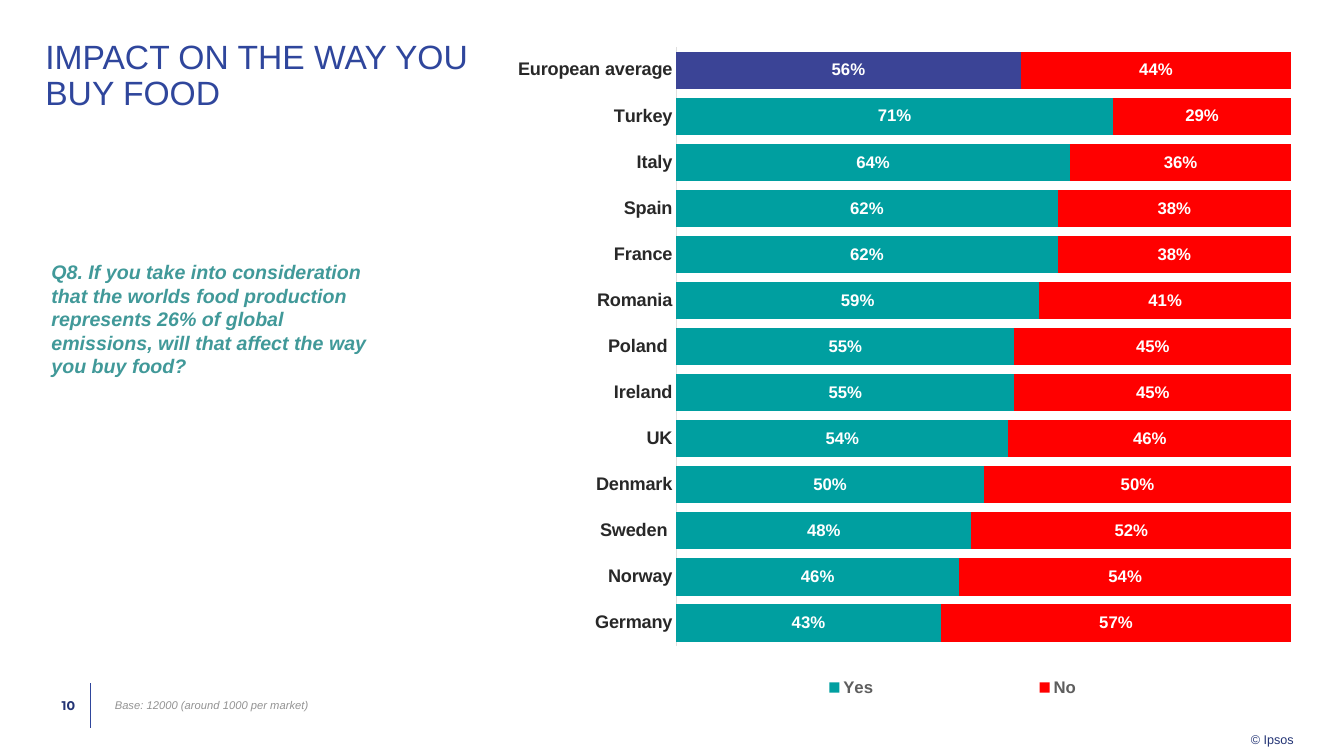
from lxml import etree
from pptx import Presentation
from pptx.chart.data import CategoryChartData
from pptx.dml.color import RGBColor
from pptx.enum.chart import XL_CHART_TYPE, XL_LABEL_POSITION, XL_LEGEND_POSITION, XL_TICK_MARK
from pptx.enum.shapes import MSO_CONNECTOR
from pptx.enum.text import MSO_ANCHOR, PP_ALIGN
from pptx.oxml import parse_xml
from pptx.oxml.ns import nsdecls, qn
from pptx.util import Pt

BAR_STACKED_100 = XL_CHART_TYPE.BAR_STACKED_100
CENTER = XL_LABEL_POSITION.CENTER
BOTTOM = XL_LEGEND_POSITION.BOTTOM
NO_TICK = XL_TICK_MARK.NONE
STRAIGHT = MSO_CONNECTOR.STRAIGHT
TOP = MSO_ANCHOR.TOP
MIDDLE = MSO_ANCHOR.MIDDLE
RIGHT = PP_ALIGN.RIGHT


def style_font(font, size, color, bold=False, italic=False, name="Arial"):
    font.name = name
    font.size = Pt(size)
    font.bold = bold
    font.italic = italic
    font.color.rgb = RGBColor.from_string(color)


def chart_layout(x, y, width, height, target=""):
    return parse_xml(
        f'<c:layout {nsdecls("c")}><c:manualLayout>{target}'
        '<c:xMode val="edge"/><c:yMode val="edge"/>'
        f'<c:x val="{x}"/><c:y val="{y}"/><c:w val="{width}"/><c:h val="{height}"/>'
        '</c:manualLayout></c:layout>'
    )


presentation = Presentation()
presentation.slide_width = Pt(960)
presentation.slide_height = Pt(540)
slide = presentation.slides.add_slide(presentation.slide_layouts[6])

divider = slide.shapes.add_connector(STRAIGHT, Pt(64.8), Pt(488.2), Pt(64.8), Pt(519.8))
divider.line.color.rgb = RGBColor.from_string("2F469C")
divider.line.width = Pt(0.5)
etree.SubElement(divider._element.spPr, qn("a:effectLst"))

question = (
    "Q8. If you take into consideration that the worlds food production "
    "represents 26% of global emissions, will that affect the way you buy food?"
)
texts = [
    ("IMPACT ON THE WAY YOU BUY FOOD", (32.4, 28.8, 337.7, 30.2), (0, 0, 0, 0), TOP,
     dict(size=24, color="2F469C")),
    (question, (36.7, 185.8, 238.3, 85), (0, 0, 0, 0), TOP,
     dict(size=14, color="419999", bold=True, italic=True)),
    ("10", (32.4, 488.2, 32.4, 31), (0, 0, 11.2, 0), MIDDLE,
     dict(size=9, color="233475", bold=True, name="Montserrat")),
    ("Base: 12000 (around 1000 per market)", (74.9, 488.2, 200.2, 31), (7.2, 3.6, 7.2, 3.6), MIDDLE,
     dict(size=8, color="939393", italic=True)),
    ("© Ipsos", (893.5, 519.8, 31, 13.7), (0, 2.9, 0, 0), TOP,
     dict(size=9, color="233475")),
]
paragraphs = []
for text, box, insets, anchor, font_style in texts:
    frame = slide.shapes.add_textbox(*[Pt(length) for length in box]).text_frame
    frame.margin_left, frame.margin_top, frame.margin_right, frame.margin_bottom = [
        Pt(inset) for inset in insets
    ]
    frame.vertical_anchor = anchor
    frame.word_wrap = True
    paragraph = frame.paragraphs[0]
    paragraph.text = text
    style_font(paragraph.font, **font_style)
    paragraphs.append(paragraph)

title, question_paragraph, page_number, base_note, copyright_line = paragraphs
title.line_spacing = 0.9
page_number.alignment = RIGHT
copyright_line._parent.word_wrap = False

yes_shares = {
    "European average": 0.56,
    "Turkey": 0.71,
    "Italy": 0.64,
    "Spain": 0.62,
    "France": 0.62,
    "Romania": 0.59,
    "Poland ": 0.55,
    " Ireland": 0.55,
    "UK": 0.54,
    "Denmark": 0.5,
    "Sweden ": 0.48,
    "Norway": 0.46,
    "Germany": 0.43,
}
chart_data = CategoryChartData(number_format="0%")
chart_data.categories = list(yes_shares)
chart_data.add_series("Yes", list(yes_shares.values()))
chart_data.add_series("No", [round(1 - share, 2) for share in yes_shares.values()])
chart = slide.shapes.add_chart(
    BAR_STACKED_100, Pt(370), Pt(28.8), Pt(558), Pt(491.8), chart_data
).chart
style_font(chart.font, 10, "282828")
chart.has_title = False

plot = chart.plots[0]
plot.gap_width = 24
plot.overlap = 100
plot.vary_by_categories = False
for series, color in zip(plot.series, ["009FA0", "FF0000"]):
    series.format.fill.solid()
    series.format.fill.fore_color.rgb = RGBColor.from_string(color)
    labels = series.data_labels
    labels.show_value = True
    labels.position = CENTER
    labels.number_format = "0%"
    labels.number_format_is_linked = False
    style_font(labels.font, 12, "FFFFFF", bold=True)
average_fill = plot.series[0].points[0].format.fill
average_fill.solid()
average_fill.fore_color.rgb = RGBColor.from_string("3B4496")

category_axis = chart.category_axis
category_axis.reverse_order = True
category_axis.major_tick_mark = NO_TICK
category_axis.minor_tick_mark = NO_TICK
category_axis.format.line.color.rgb = RGBColor.from_string("DFDFDF")
category_axis.format.line.width = Pt(0.75)
style_font(category_axis.tick_labels.font, 13, "282828", bold=True)
chart.value_axis.has_major_gridlines = False
chart.value_axis.visible = False

chart.has_legend = True
legend = chart.legend
legend.position = BOTTOM
legend.include_in_layout = False
style_font(legend.font, 12, "5E5E5E", bold=True)
for layout in legend._element.findall(qn("c:layout")):
    legend._element.remove(layout)
legend._element.find(qn("c:legendPos")).addnext(chart_layout(0.19, 0.91, 0.73, 0.06))

plot_area = chart._chartSpace.chart.plotArea
for layout in plot_area.findall(qn("c:layout")):
    plot_area.remove(layout)
plot_area.insert(0, chart_layout(0.2, 0.01, 0.79, 0.87, '<c:layoutTarget val="inner"/>'))

presentation.save("out.pptx")
